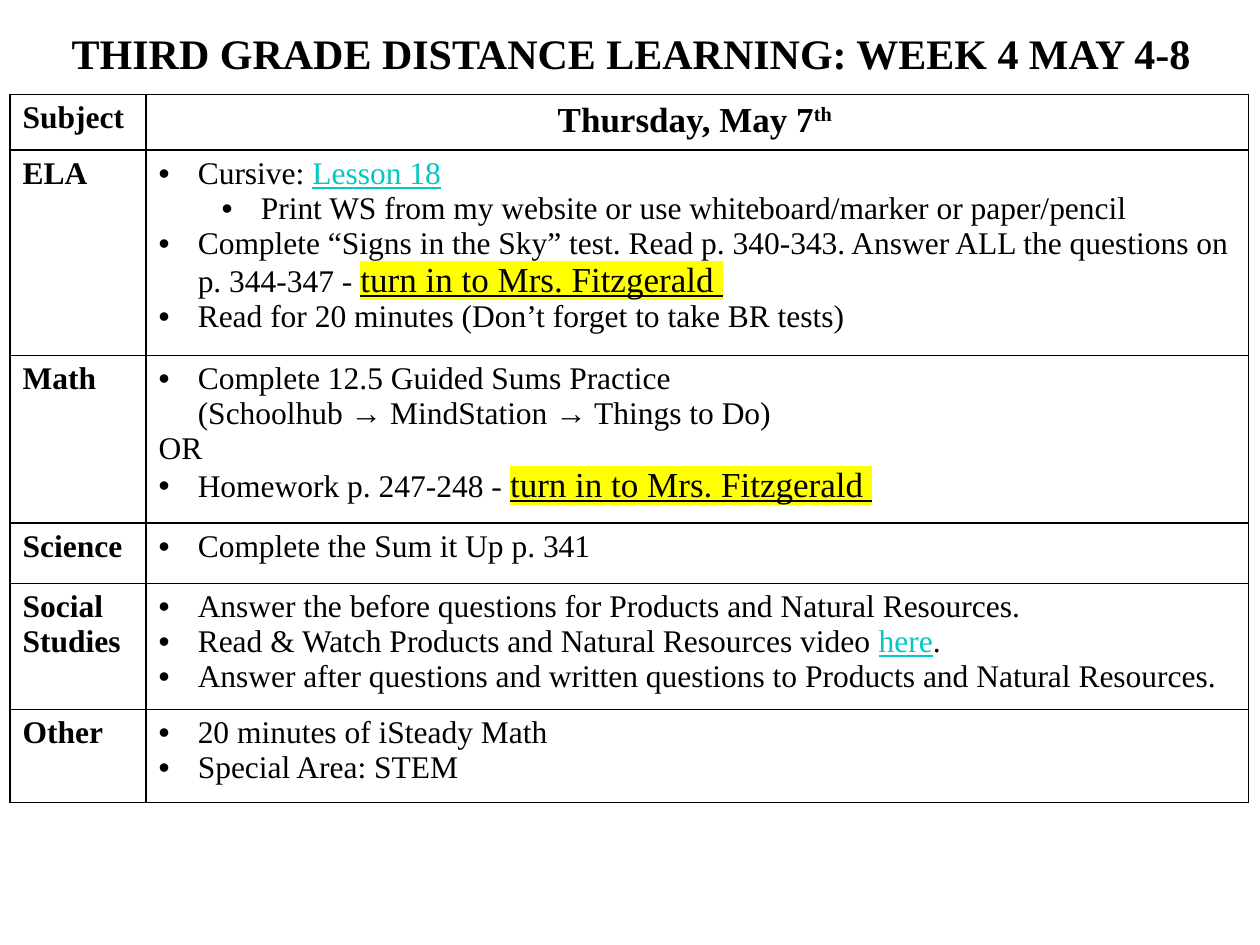
"""Build a weekly distance learning slide with a subject table."""
from lxml.etree import SubElement
from pptx import Presentation
from pptx.dml.color import RGBColor
from pptx.enum.text import PP_ALIGN as Align
from pptx.oxml.ns import qn
from pptx.util import Inches, Pt

FONT = "Times New Roman"
BLACK, WHITE, TEAL, YELLOW = "000000", "FFFFFF", "00C8C3", "FFFF00"
COLUMN_WIDTHS = (1.08, 8.75)
LINK = {"color": TEAL, "underline": True}
TURN_IN = ("turn in to Mrs. Fitzgerald ",
           {"size": 20, "underline": True, "highlight": YELLOW})
LINE_BREAK = ("\n", {})

SUBJECTS = [
    ("ELA", 1.63, [
        (0, ["Cursive: ", ("Lesson 18", LINK)]),
        (1, ["Print WS from my website or use whiteboard/marker or paper/pencil"]),
        (0, ["Complete “Signs in the Sky” test. Read p. 340-343. "
             "Answer ALL the questions on p. 344-347 - ", TURN_IN]),
        (0, ["Read for 20 minutes (Don’t forget to take BR tests)"]),
    ]),
    ("Math", 1.33, [
        (0, ["Complete 12.5 Guided Sums Practice", LINE_BREAK,
             "(Schoolhub → MindStation → Things to Do)"]),
        (None, ["OR"]),
        (0, ["Homework p. 247-248 - ", TURN_IN]),
    ]),
    ("Science", 0.48, [(0, ["Complete the Sum it Up p. 341"])]),
    ("Social Studies", 1.0, [
        (0, ["Answer the before questions for Products and Natural Resources."]),
        (0, ["Read & Watch Products and Natural Resources video ", ("here", LINK), "."]),
        (0, ["Answer after questions and written questions to Products and Natural Resources."]),
    ]),
    ("Other", 0.74, [
        (0, ["20 minutes of iSteady Math"]),
        (0, ["Special Area: STEM"]),
    ]),
]


def rgb(value):
    """Turn a hex string into a colour."""
    return RGBColor.from_string(value)


def add_run(paragraph, text, size=18, color=BLACK, bold=False, underline=False,
            highlight=None, baseline=None):
    """Append one formatted run to a paragraph."""
    run = paragraph.add_run()
    run.text = text
    font = run.font
    font.name, font.size, font.bold, font.underline = FONT, Pt(size), bold, underline
    font.color.rgb = rgb(color)
    properties = run._r.get_or_add_rPr()
    if baseline:
        properties.set("baseline", str(baseline))
    if highlight:
        marker = SubElement(properties, qn("a:highlight"))
        SubElement(marker, qn("a:srgbClr"), val=highlight)
        properties.find(qn("a:latin")).addprevious(marker)


def set_bullet(paragraph, level):
    """Give a paragraph a round bullet with a hanging indent."""
    paragraph.level = level
    properties = paragraph._p.get_or_add_pPr()
    properties.set("marL", str(Inches(0.31 + 0.5 * level)))
    properties.set("indent", str(Inches(-0.31)))
    SubElement(properties, qn("a:buFont"), typeface="Arial")
    SubElement(properties, qn("a:buChar"), char="•")


def style_cell(cell):
    """Give a cell black borders and a white fill."""
    properties = cell._tc.get_or_add_tcPr()
    for side in ("lnL", "lnR", "lnT", "lnB"):
        line = SubElement(properties, qn(f"a:{side}"), w=str(Pt(1)))
        fill = SubElement(line, qn("a:solidFill"))
        SubElement(fill, qn("a:srgbClr"), val=BLACK)
    cell.fill.solid()
    cell.fill.fore_color.rgb = rgb(WHITE)


def fill_tasks(cell, tasks):
    """Write the task paragraphs of one subject."""
    frame = cell.text_frame
    for index, (level, pieces) in enumerate(tasks):
        paragraph = frame.add_paragraph() if index else frame.paragraphs[0]
        if level is not None:
            set_bullet(paragraph, level)
        for piece in pieces:
            if piece == LINE_BREAK:
                paragraph.add_line_break()
                continue
            text, style = (piece, {}) if isinstance(piece, str) else piece
            add_run(paragraph, text, **style)


def add_title(slide, text):
    """Add the centred heading."""
    box = slide.shapes.add_textbox(Inches(0.01), Inches(0.17), Inches(10), Inches(0.5))
    box.text_frame.word_wrap = True
    paragraph = box.text_frame.paragraphs[0]
    paragraph.alignment = Align.CENTER
    add_run(paragraph, text, size=24, bold=True)


def add_schedule(slide):
    """Add the table of subjects and tasks."""
    heights = [0.44] + [height for _, height, _ in SUBJECTS]
    table = slide.shapes.add_table(
        len(heights), len(COLUMN_WIDTHS), Inches(0.08), Inches(0.75),
        Inches(sum(COLUMN_WIDTHS)), Inches(sum(heights))).table
    for column, width in zip(table.columns, COLUMN_WIDTHS):
        column.width = Inches(width)
    for row, height in zip(table.rows, heights):
        row.height = Inches(height)
    for cell in table.iter_cells():
        style_cell(cell)

    for row, label in enumerate(["Subject"] + [name for name, _, _ in SUBJECTS]):
        add_run(table.cell(row, 0).text_frame.paragraphs[0], label, bold=True)
    day = table.cell(0, 1).text_frame.paragraphs[0]
    day.alignment = Align.CENTER
    add_run(day, "Thursday, May 7", size=20, bold=True)
    add_run(day, "th ", size=20, bold=True, baseline=30000)
    for row, (_, _, tasks) in enumerate(SUBJECTS, start=1):
        fill_tasks(table.cell(row, 1), tasks)


def main():
    """Build and save the presentation."""
    presentation = Presentation()
    presentation.slide_width, presentation.slide_height = Inches(10), Inches(7.5)
    slide = presentation.slides.add_slide(presentation.slide_layouts[6])
    add_schedule(slide)
    add_title(slide, "THIRD GRADE DISTANCE LEARNING: WEEK 4 MAY 4-8")
    presentation.save("out.pptx")


if __name__ == "__main__":
    main()
